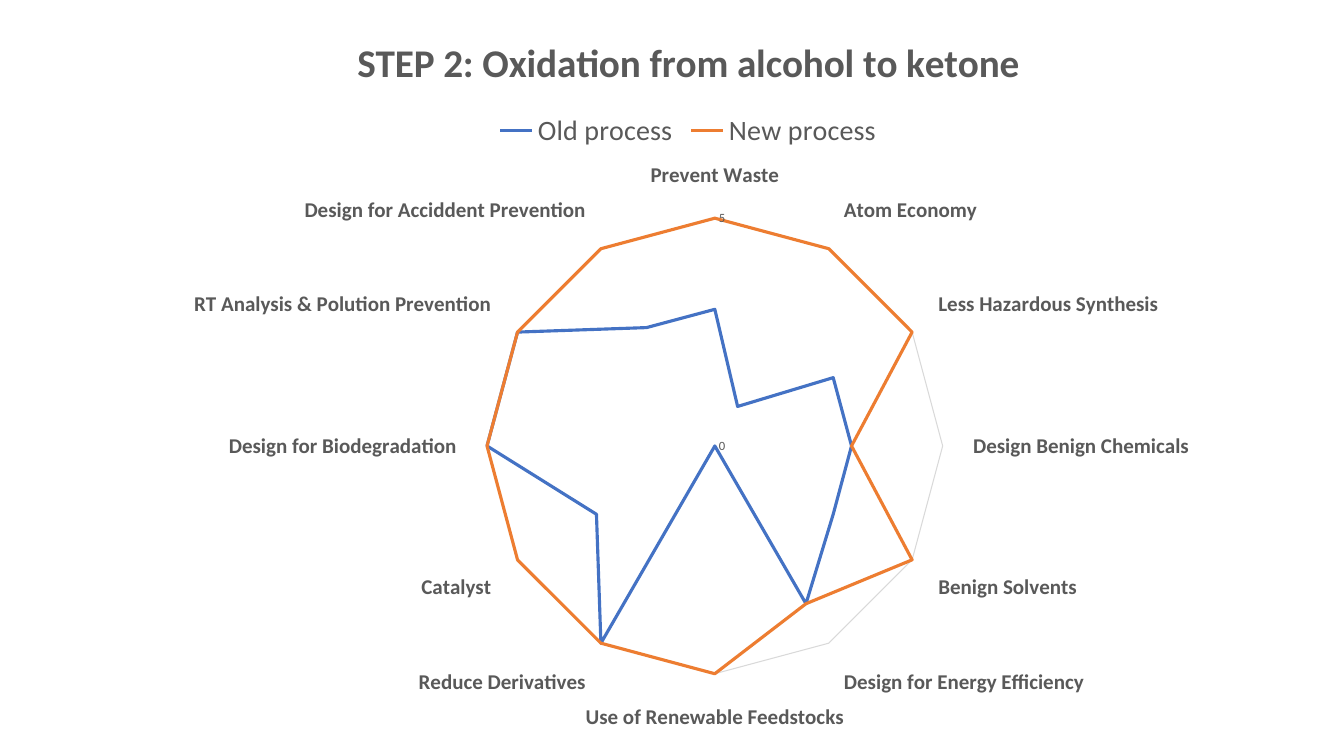
"""Build a slide with a radar chart comparing the old and new oxidation processes."""
import pptx
import pptx.chart.data
import pptx.dml.color
import pptx.enum.chart
import pptx.oxml
import pptx.oxml.ns
import pptx.util
from pptx.util import Inches

THEME = {
    "font": "Calibri",
    "text": "595959",
    "grid": "D9D9D9",
    "title_size": 28,
    "legend_size": 20,
    "category_size": 15,
    "value_size": 9,
    "grid_width": 0.75,
    "series_width": 2.25,
    "series": {"Old process": "4472C4", "New process": "ED7D31"},
}

SCORES = {
    "Prevent Waste": (3, 5),
    "Atom Economy": (1, 5),
    "Less Hazardous Synthesis": (3, 5),
    "Design Benign Chemicals": (3, 3),
    "Benign Solvents": (3, 5),
    "Design for Energy Efficiency": (4, 4),
    "Use of Renewable Feedstocks": (0, 5),
    "Reduce Derivatives": (5, 5),
    "Catalyst": (3, 5),
    "Design for Biodegradation": (5, 5),
    "RT Analysis & Polution Prevention": (5, 5),
    "Design for Acciddent Prevention": (3, 5),
}

PLOT_LAYOUT = {"x": 0.31, "y": 0.28, "w": 0.43, "h": 0.61}


def style_font(font, size, bold=False):
    font.name = THEME["font"]
    font.size = pptx.util.Pt(size)
    font.bold = bold
    font.color.rgb = pptx.dml.color.RGBColor.from_string(THEME["text"])


def style_line(line, color, width):
    line.color.rgb = pptx.dml.color.RGBColor.from_string(color)
    line.width = pptx.util.Pt(width)


presentation = pptx.Presentation()
presentation.slide_width = Inches(13.33)
presentation.slide_height = Inches(7.5)
slide = presentation.slides.add_slide(presentation.slide_layouts[6])

chart_data = pptx.chart.data.CategoryChartData()
chart_data.categories = list(SCORES)
for name, values in zip(THEME["series"], zip(*SCORES.values())):
    chart_data.add_series(name, values)

chart = slide.shapes.add_chart(
    pptx.enum.chart.XL_CHART_TYPE.RADAR,
    Inches(1.52), Inches(0.09), Inches(10.61), Inches(7.41),
    chart_data,
).chart
style_font(chart.font, 10)

chart.has_title = True
title = chart.chart_title
title.include_in_layout = False
title.text_frame.text = "STEP 2: Oxidation from alcohol to ketone"
style_font(title.text_frame.paragraphs[0].runs[0].font, THEME["title_size"], bold=True)

chart.has_legend = True
chart.legend.position = pptx.enum.chart.XL_LEGEND_POSITION.TOP
chart.legend.include_in_layout = False
style_font(chart.legend.font, THEME["legend_size"])

category_axis = chart.category_axis
category_axis.has_major_gridlines = False
style_font(category_axis.tick_labels.font, THEME["category_size"], bold=True)
style_line(category_axis.format.line, THEME["grid"], THEME["grid_width"])

value_axis = chart.value_axis
value_axis.minimum_scale = 0
value_axis.maximum_scale = 5
value_axis.major_unit = 5
value_axis.has_major_gridlines = True
style_line(value_axis.major_gridlines.format.line, THEME["grid"], THEME["grid_width"])
style_font(value_axis.tick_labels.font, THEME["value_size"])
value_axis.format.line.fill.background()

for axis in (category_axis, value_axis):
    axis.major_tick_mark = pptx.enum.chart.XL_TICK_MARK.NONE
    axis.minor_tick_mark = pptx.enum.chart.XL_TICK_MARK.NONE

plot = chart.plots[0]
plot.vary_by_categories = False
for series in plot.series:
    style_line(series.format.line, THEME["series"][series.name], THEME["series_width"])
    series.marker.style = pptx.enum.chart.XL_MARKER_STYLE.NONE

plot_area = chart.element.xpath("c:chart/c:plotArea")[0]
for layout in plot_area.xpath("c:layout"):
    plot_area.remove(layout)
positions = "".join(f'<c:{key} val="{value}"/>' for key, value in PLOT_LAYOUT.items())
plot_area.insert(0, pptx.oxml.parse_xml(
    f'<c:layout {pptx.oxml.ns.nsdecls("c")}><c:manualLayout>'
    '<c:layoutTarget val="inner"/><c:xMode val="edge"/><c:yMode val="edge"/>'
    f"{positions}</c:manualLayout></c:layout>"
))

presentation.save("out.pptx")
